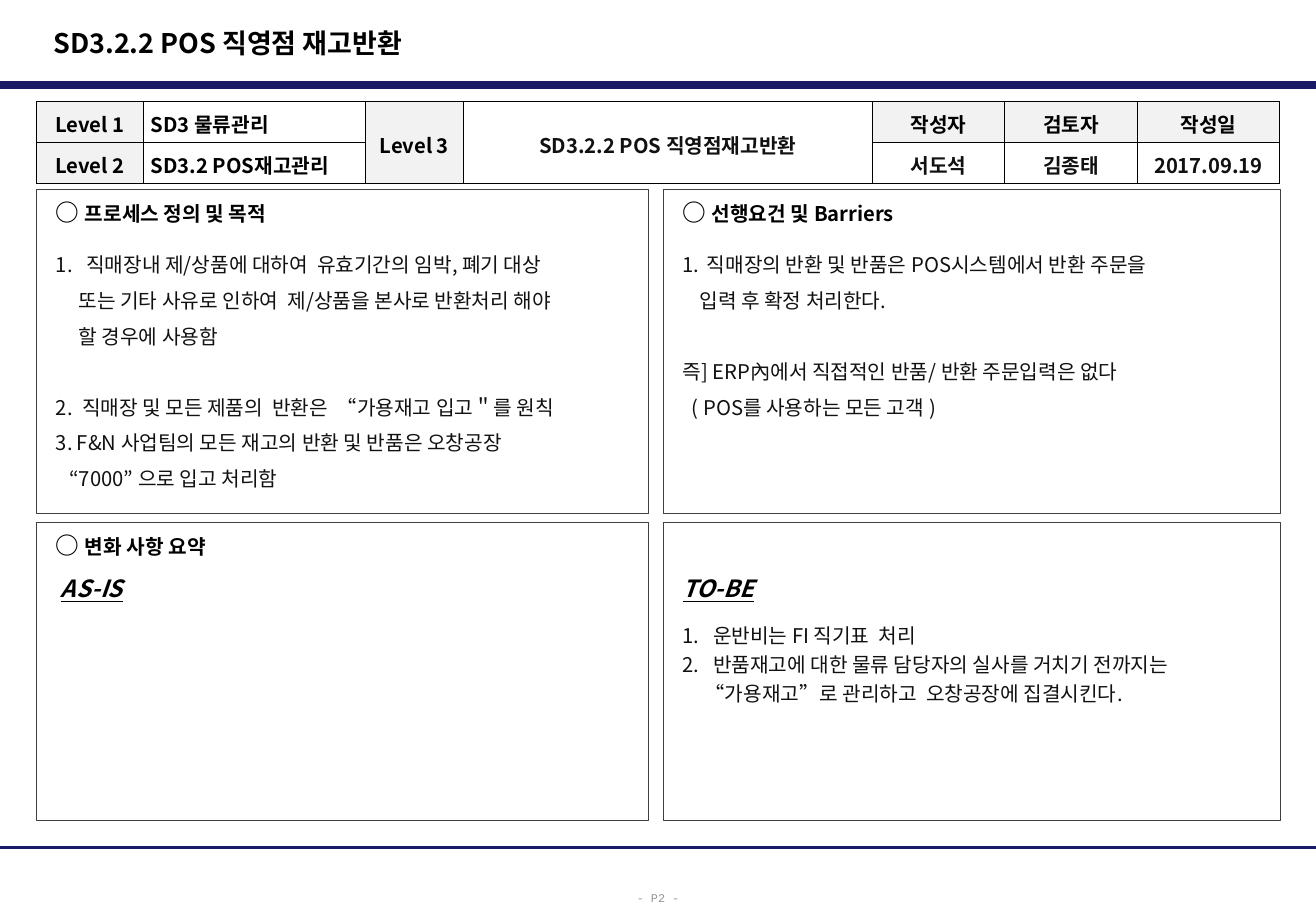
from lxml.etree import SubElement
from pptx import Presentation
from pptx.dml.color import RGBColor
from pptx.enum.shapes import MSO_CONNECTOR
from pptx.enum.text import MSO_ANCHOR as Anchor, MSO_AUTO_SIZE as AutoSize, PP_ALIGN as Align
from pptx.oxml.ns import qn
from pptx.util import Pt

# Content
FONT = "Noto Sans CJK KR"
COLORS = {"navy": "191966", "black": "000000", "text": "111111", "border": "404040",
          "label": "F2F2F2", "white": "FFFFFF", "page": "969696"}
TITLE = "SD3.2.2 POS 직영점 재고반환"
PAGE_NUMBER = "- P2 -"

TABLE_ROWS = [
    ["Level 1", "SD3 물류관리", "Level 3", "SD3.2.2 POS 직영점재고반환", "작성자", "검토자", "작성일"],
    ["Level 2", "SD3.2 POS재고관리", "", "", "서도석", "김종태", "2017.09.19"],
]
COLUMN_WIDTHS = [63.5, 131.5, 58, 242.5, 78.5, 78.5, 84.5]
LABEL_CELLS = {(0, 0), (1, 0), (0, 2), (0, 4), (0, 5), (0, 6)}
VALUE_CELLS = {(0, 3), (1, 4), (1, 5), (1, 6)}

# Each line: number or None, left indent, space before, text
PANELS = [
    {"heading": "프로세스 정의 및 목적", "pitch": 18.7, "lines": [
        (1, 18, 11.5, "직매장내 제/상품에 대하여  유효기간의 임박, 폐기 대상"),
        (None, 13.5, 2.4, "또는 기타 사유로 인하여  제/상품을 본사로 반환처리 해야"),
        (None, 13.5, 2.4, "할 경우에 사용함"),
        (2, 15.5, 23.5, "직매장 및 모든 제품의  반환은  “가용재고 입고＂를 원칙"),
        (3, 12.5, 2.4, "F&N 사업팀의 모든 재고의 반환 및 반품은 오창공장"),
        (None, 8, 2.4, "“7000” 으로 입고 처리함")]},
    {"heading": "선행요건 및 Barriers", "pitch": 18.7, "lines": [
        (1, 14.4, 11.5, "직매장의 반환 및 반품은 POS시스템에서 반환 주문을"),
        (None, 10, 2.4, "입력 후 확정 처리한다."),
        (None, 0, 23.5, "즉] ERP內에서 직접적인 반품/ 반환 주문입력은 없다"),
        (None, 5.5, 2.4, "( POS를 사용하는 모든 고객 )")]},
    {"heading": "변화 사항 요약", "state": "AS-IS", "state_indent": 3, "lines": []},
    {"state": "TO-BE", "pitch": 17.2, "lines": [
        (1, 18, 9.5, "운반비는 FI 직기표  처리"),
        (2, 18, 0, "반품재고에 대한 물류 담당자의 실사를 거치기 전까지는"),
        (None, 13, 0, "“가용재고”로 관리하고  오창공장에 집결시킨다.")]},
]
PANEL_LEFTS, PANEL_WIDTHS = (21.6, 393.1), (362.9, 365.8)
PANEL_TOPS, PANEL_HEIGHTS = (112.3, 309.6), (192.2, 177)
HEADING_PITCH, STATE_GAP = 18, 8


def color(name):
    return RGBColor.from_string(COLORS[name])


def set_font(para, size, shade, bold=False, name=FONT):
    font = para.font
    font.size, font.bold, font.name = Pt(size), bold, name
    font.color.rgb = color(shade)
    SubElement(para._p.pPr.find(qn("a:defRPr")), qn("a:ea"), typeface=name)


def set_margins(frame, left, top, right, bottom):
    frame.margin_left, frame.margin_top = Pt(left), Pt(top)
    frame.margin_right, frame.margin_bottom = Pt(right), Pt(bottom)


def place(shape, left, top, width, height):
    shape.left, shape.top = Pt(left), Pt(top)
    shape.width, shape.height = Pt(width), Pt(height)


def add_para(frame, pitch, before=0, indent=0, number=None):
    para = frame.paragraphs[0] if not frame.text else frame.add_paragraph()
    para.alignment = Align.LEFT
    para.line_spacing, para.space_before, para.space_after = Pt(pitch), Pt(before), Pt(0)
    props = para._p.get_or_add_pPr()
    props.set("marL", str(Pt(indent)))
    props.set("indent", str(-Pt(indent) if number else 0))
    if number:
        SubElement(props, qn("a:buFont"), typeface=FONT)
        SubElement(props, qn("a:buAutoNum"), type="arabicPeriod", startAt=str(number))
    else:
        SubElement(props, qn("a:buNone"))
    return para


def add_rule(page, y, width):
    rule = page.shapes.add_connector(MSO_CONNECTOR.STRAIGHT, 0, Pt(y), deck.slide_width, Pt(y))
    rule.line.color.rgb, rule.line.width = color("navy"), Pt(width)
    SubElement(rule._element.spPr, qn("a:effectLst"))


def fill_panel(box, panel):
    box.line.color.rgb, box.line.width = color("border"), Pt(0.5)
    frame = box.text_frame
    frame.word_wrap, frame.auto_size = True, AutoSize.NONE
    frame.vertical_anchor = Anchor.TOP
    heading = panel.get("heading")
    top = 3.6 if heading else 3.6 + HEADING_PITCH + STATE_GAP
    set_margins(frame, 11.5, top, 7.2, 3.6)
    if heading:
        para = add_para(frame, HEADING_PITCH)
        set_font(para, 12, "black", bold=True)
        for text, size in (("○ ", 14), (heading, 12)):
            span = para.add_run()
            span.text, span.font.size = text, Pt(size)
    if "state" in panel:
        para = add_para(frame, HEADING_PITCH, STATE_GAP if heading else 0,
                        panel.get("state_indent", 0))
        set_font(para, 14, "black", bold=True)
        para.font.italic = para.font.underline = True
        para.add_run().text = panel["state"]
    for number, indent, before, text in panel["lines"]:
        para = add_para(frame, panel["pitch"], before, indent, number)
        set_font(para, 12, "text")
        para.add_run().text = text


def style_cell(cell, row, column):
    cell.fill.solid()
    cell.fill.fore_color.rgb = color("label" if (row, column) in LABEL_CELLS else "white")
    cell.vertical_anchor = Anchor.MIDDLE
    set_margins(cell, 4.3, 0.7, 4.3, 0.7)
    props = cell._tc.get_or_add_tcPr()
    for place_in_order, side in enumerate(("a:lnL", "a:lnR", "a:lnT", "a:lnB")):
        edge = props.makeelement(qn(side), {"w": str(Pt(0.5))})
        SubElement(SubElement(edge, qn("a:solidFill")), qn("a:srgbClr"), val=COLORS["black"])
        props.insert(place_in_order, edge)


deck = Presentation()
deck.slide_width, deck.slide_height = Pt(780), Pt(540)
page = deck.slides.add_slide(deck.slide_layouts.get_by_name("Comparison"))
title, *boxes = [holder for holder in page.placeholders if holder.placeholder_format.idx < 10]

# Rules and page number
add_rule(page, 50.4, 4.5)
add_rule(page, 502.5, 1.5)
footer = page.shapes.add_textbox(Pt(370), Pt(522), Pt(40), Pt(18)).text_frame
footer.word_wrap = False
para = footer.paragraphs[0]
para.alignment, para.line_spacing = Align.CENTER, 1.3
set_font(para, 7, "page", name="Courier New")
para.add_run().text = PAGE_NUMBER

# Title
place(title, 24.5, 11.5, 512, 27.4)
title.text_frame.vertical_anchor, title.text_frame.auto_size = Anchor.MIDDLE, AutoSize.NONE
title.text_frame.text = TITLE
para = title.text_frame.paragraphs[0]
para.alignment = Align.LEFT
set_font(para, 16, "black", bold=True)

# Process table
table = page.shapes.add_table(2, 7, Pt(21.6), Pt(60), Pt(sum(COLUMN_WIDTHS)), Pt(48.6)).table
table.first_row = table.horz_banding = False
for column, width in zip(table.columns, COLUMN_WIDTHS):
    column.width = Pt(width)
for column in (2, 3):
    table.cell(0, column).merge(table.cell(1, column))
for row, texts in enumerate(TABLE_ROWS):
    table.rows[row].height = Pt(24.3)
    for column, text in enumerate(texts):
        cell = table.cell(row, column)
        style_cell(cell, row, column)
        para = cell.text_frame.paragraphs[0]
        para.alignment = Align.LEFT if column == 1 else Align.CENTER
        para.line_spacing = Pt(20)
        set_font(para, 12, "text" if (row, column) in VALUE_CELLS else "black", bold=True)
        if text:
            para.add_run().text = text

# Four panels, filled row by row
for index, (box, panel) in enumerate(zip(boxes, PANELS)):
    row, column = divmod(index, 2)
    place(box, PANEL_LEFTS[column], PANEL_TOPS[row], PANEL_WIDTHS[column], PANEL_HEIGHTS[row])
    fill_panel(box, panel)

deck.save("out.pptx")
